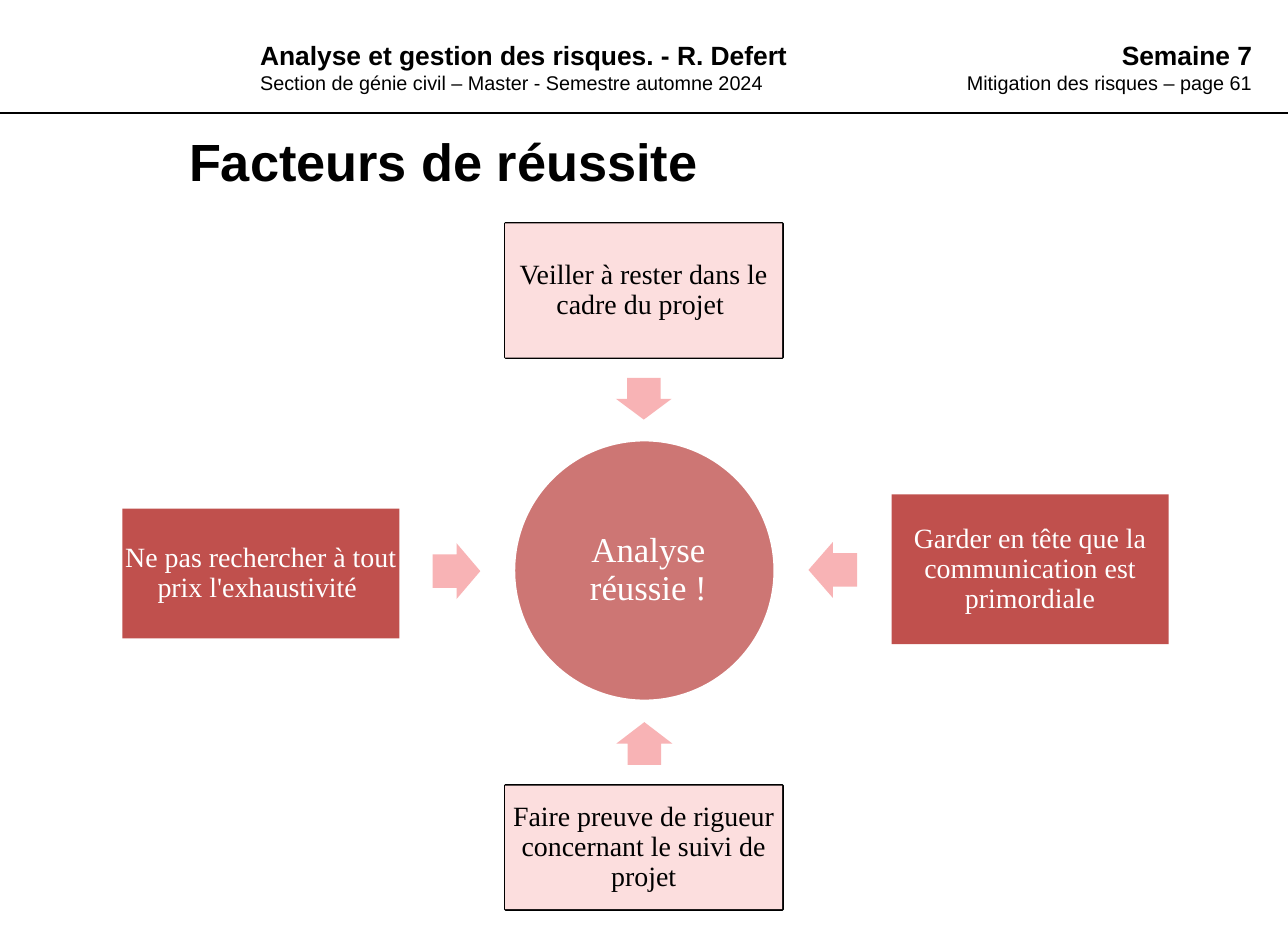
from dataclasses import dataclass

from lxml.etree import SubElement
from pptx import Presentation
from pptx.dml.color import RGBColor
from pptx.enum.shapes import MSO_CONNECTOR as Line, MSO_SHAPE as Kind
from pptx.enum.text import MSO_ANCHOR as Anchor, PP_ALIGN as Align
from pptx.oxml.ns import qn
from pptx.shapes.autoshape import Shape
from pptx.slide import Slide
from pptx.util import Inches, Pt

WIDE, HIGH = 65 / 6, 95 / 12
COLORS = {
    "black": "000000",
    "white": "FFFFFF",
    "red": "C0504D",
    "pink": "FCDEDE",
    "arrow": "F8B3B5",
}


@dataclass
class Header:
    left: float
    width: float
    align: Align
    title: str
    detail: str


@dataclass
class Factor:
    text: str
    left: float
    top: float
    height: float
    fill: str
    ink: str
    edge: str


@dataclass
class Arrow:
    left: float
    top: float
    length: float
    turn: int


HEADERS = [
    Header(2.09, 6.07, Align.LEFT, "Analyse et gestion des risques. - R. Defert",
           "Section de génie civil – Master - Semestre automne 2024"),
    Header(7.48, 3.15, Align.RIGHT, "Semaine 7", "Mitigation des risques – page 61"),
]
FACTORS = [
    Factor("Veiller à rester dans le cadre du projet ", 4.25, 1.88, 1.13,
           "pink", "black", "black"),
    Factor("Garder en tête que la communication est primordiale", 7.5, 4.16, 1.26,
           "red", "white", "white"),
    Factor("Faire preuve de rigueur concernant le suivi de projet", 4.25, 6.61, 1.04,
           "pink", "black", "black"),
    Factor("Ne pas rechercher à tout prix l'exhaustivité ", 1.03, 4.28, 1.09,
           "red", "white", "white"),
]
ARROWS = [
    Arrow(5.24, 3.12, 0.35, 90),
    Arrow(6.8, 4.56, 0.41, 180),
    Arrow(5.24, 6.02, 0.36, 270),
    Arrow(3.64, 4.57, 0.4, 0),
]


def color(name: str) -> RGBColor:
    return RGBColor.from_string(COLORS[name])


def style(para, size: float, name: str, ink: str, bold: bool = False) -> None:
    font = para.font
    font.size, font.name, font.bold = Pt(size), name, bold
    font.color.rgb = color(ink)


def add_shape(slide: Slide, kind: Kind, left: float, top: float,
              width: float, height: float, fill: str) -> Shape:
    shape = slide.shapes.add_shape(
        kind, Inches(left), Inches(top), Inches(width), Inches(height))
    shape.shadow.inherit = False
    shape.fill.solid()
    shape.fill.fore_color.rgb = color(fill)
    shape.line.fill.background()
    return shape


def set_edge(shape: Shape, name: str) -> None:
    shape.line.color.rgb = color(name)
    shape.line.width = Pt(2)


def set_label(shape: Shape, text: str, size: float, ink: str) -> None:
    frame = shape.text_frame
    frame.word_wrap = True
    frame.vertical_anchor = Anchor.MIDDLE
    frame.margin_left = frame.margin_right = Inches(0.02)
    frame.margin_top = frame.margin_bottom = Inches(0.02)
    para = frame.paragraphs[0]
    para.text = text
    para.alignment = Align.CENTER
    para.line_spacing = 0.9
    style(para, size, "Times New Roman", ink)


def add_header(slide: Slide, head: Header) -> None:
    box = slide.shapes.add_textbox(
        Inches(head.left), Inches(0.28), Inches(head.width), Inches(0.57))
    frame = box.text_frame
    frame.word_wrap = True
    first, second = frame.paragraphs[0], frame.add_paragraph()
    first.text, second.text = head.title, head.detail
    first.alignment = second.alignment = head.align
    style(first, 16, "Arial", "black", True)
    style(second, 12, "Arial", "black")


def add_rule(slide: Slide) -> None:
    y = Inches(0.95)
    rule = slide.shapes.add_connector(Line.STRAIGHT, 0, y, Inches(WIDE), y)
    rule.line.color.rgb = color("black")
    rule.line.width = Pt(0.75)
    SubElement(rule.element.spPr, qn("a:effectLst"))


def set_title(slide: Slide, text: str) -> None:
    title = slide.shapes.title
    title.left, title.top = Inches(1.49), Inches(1.03)
    title.width, title.height = Inches(8.79), Inches(0.64)
    frame = title.text_frame
    frame.text = text
    frame.vertical_anchor = Anchor.MIDDLE
    para = frame.paragraphs[0]
    para.alignment = Align.LEFT
    style(para, 31.7, "Arial", "black", True)


def add_factor(slide: Slide, item: Factor) -> None:
    """Lay a borderless label over an edged box, so half the edge shows."""
    back, front = (
        add_shape(slide, Kind.RECTANGLE, item.left, item.top, 2.33,
                  item.height, item.fill)
        for _ in range(2))
    set_edge(back, item.edge)
    set_label(front, item.text, 16.9, item.ink)


def add_arrow(slide: Slide, item: Arrow) -> None:
    arrow = add_shape(slide, Kind.RIGHT_ARROW, item.left, item.top,
                      item.length, 0.47, "arrow")
    arrow.adjustments[0], arrow.adjustments[1] = 0.6, 0.5
    arrow.rotation = item.turn


def add_goal(slide: Slide) -> None:
    goal = add_shape(slide, Kind.OVAL, 4.32, 3.7, 2.2, 2.2, "red")
    tint = goal.element.spPr.find(qn("a:solidFill"))[0]
    SubElement(tint, qn("a:alpha"), val="78000")
    set_edge(goal, "white")
    set_label(goal, "Analyse réussie !", 21.1, "white")
    goal.text_frame.margin_left = Inches(0.09)


def main() -> None:
    deck = Presentation()
    deck.slide_width, deck.slide_height = Inches(WIDE), Inches(HIGH)
    slide = deck.slides.add_slide(deck.slide_layouts[5])
    add_rule(slide)
    for head in HEADERS:
        add_header(slide, head)
    set_title(slide, "Facteurs de réussite")
    for arrow in ARROWS:
        add_arrow(slide, arrow)
    for factor in FACTORS:
        add_factor(slide, factor)
    add_goal(slide)
    deck.save("out.pptx")


if __name__ == "__main__":
    main()
